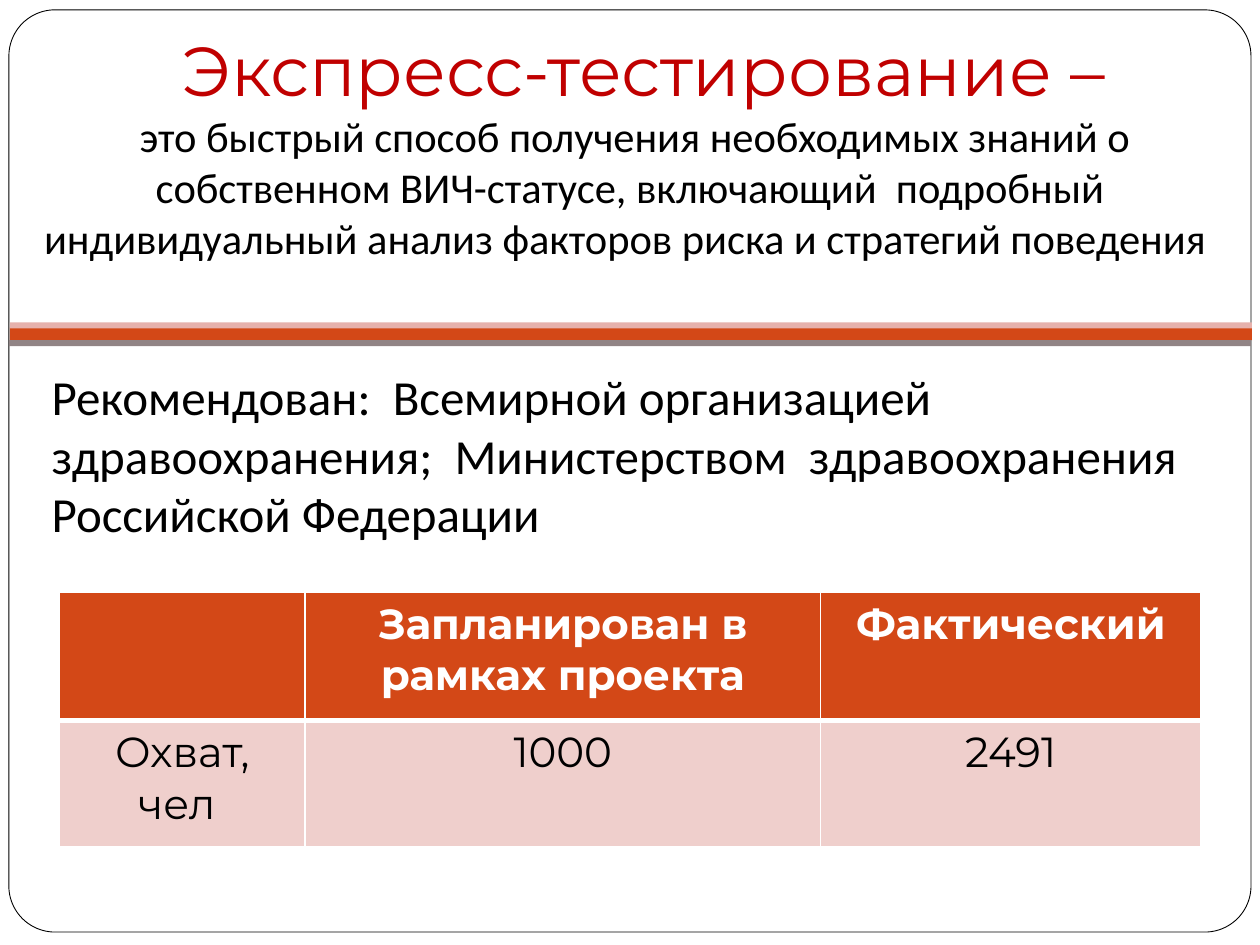
from pptx import Presentation
from pptx.dml.color import RGBColor
from pptx.enum.shapes import MSO_SHAPE as Shape
from pptx.enum.text import MSO_ANCHOR as Anchor, PP_ALIGN as Align
from pptx.oxml import parse_xml
from pptx.oxml.ns import nsdecls
from pptx.util import Cm, Pt


def color(value):
    return RGBColor.from_string(value)


def style(para, size, face, tint, bold=False):
    para.font.size = Pt(size)
    para.font.name = face
    para.font.bold = bold
    para.font.color.rgb = color(tint)


deck = Presentation()
deck.slide_width, deck.slide_height = Cm(25.4), Cm(19.05)
page = deck.slides.add_slide(deck.slide_layouts[6])

frame = page.shapes.add_shape(Shape.ROUNDED_RECTANGLE, Cm(0.18), Cm(0.2), Cm(25.04), Cm(18.59))
frame.adjustments[0] = 0.05
frame.shadow.inherit = False
frame.fill.solid()
frame.fill.fore_color.rgb = color("FFFFFF")
frame.line.color.rgb = color("000000")
frame.line.width = Pt(0.5)

for left, top, height, tint in [
    (0.2, 6.6, 0.26, "D34817"),
    (0.2, 6.5, 0.12, "E6B1AC"),
    (0.18, 6.86, 0.12, "918485"),
]:
    stripe = page.shapes.add_shape(Shape.RECTANGLE, Cm(left), Cm(top), Cm(25.04), Cm(height))
    stripe.shadow.inherit = False
    stripe.fill.solid()
    stripe.fill.fore_color.rgb = color(tint)
    stripe.line.fill.background()

title_box = page.shapes.add_textbox(Cm(0), Cm(1.78), Cm(25.4), Cm(3.76))
title = title_box.text_frame
title.word_wrap = True
title.vertical_anchor = Anchor.BOTTOM
title.margin_bottom = Cm(0.23)
heading = title.paragraphs[0]
heading.text = "Экспресс-тестирование –"
heading._p.get_or_add_pPr().set("marL", str(Cm(0.55)))
style(heading, 39.6, "Montserrat", "C00000")
definition = title.add_paragraph()
definition.text = (
    "это быстрый способ получения необходимых знаний о собственном ВИЧ-статусе, "
    "включающий  подробный индивидуальный анализ факторов риска и стратегий поведения "
)
definition._p.get_or_add_pPr().set("indent", str(Cm(0.2)))
style(definition, 24.3, "Calibri", "000000")
for para in title.paragraphs:
    para.alignment = Align.CENTER

advice_box = page.shapes.add_textbox(Cm(0.79), Cm(7.26), Cm(24), Cm(3.84))
advice_box.text_frame.word_wrap = True
advice = advice_box.text_frame.paragraphs[0]
advice.text = (
    "Рекомендован:  Всемирной организацией здравоохранения;  "
    "Министерством  здравоохранения Российской Федерации"
)
style(advice, 28, "Calibri", "000000")

rows = [
    ("", "Запланирован в рамках проекта", "Фактический"),
    ("Охват, чел ", "1000", "2491"),
]
looks = [("D34817", "FFFFFF", True, 3), ("EFCFCC", "000000", False, 1)]
table = page.shapes.add_table(2, 3, Cm(1.2), Cm(11.94), Cm(23.01), Cm(5.13)).table
for column, width in zip(table.columns, (4.95, 10.39, 7.67)):
    column.width = Cm(width)
for row, height in zip(table.rows, (2.59, 2.54)):
    row.height = Cm(height)

for r, (texts, (fill, tint, bold, bottom)) in enumerate(zip(rows, looks)):
    for c, text in enumerate(texts):
        cell = table.cell(r, c)
        cell.text = text
        para = cell.text_frame.paragraphs[0]
        para.alignment = Align.CENTER
        style(para, 24, "Montserrat", tint, bold)
        cell.fill.solid()
        cell.fill.fore_color.rgb = color(fill)
        top = 3 if r else 1
        edges = [("lnL", 1), ("lnR", 1), ("lnT", top), ("lnB", bottom)]
        for place, (edge, weight) in enumerate(edges):
            border = parse_xml(
                f'<a:{edge} {nsdecls("a")} w="{Pt(weight)}"><a:solidFill>'
                f'<a:srgbClr val="FFFFFF"/></a:solidFill></a:{edge}>'
            )
            cell._tc.get_or_add_tcPr().insert(place, border)

deck.save("out.pptx")
